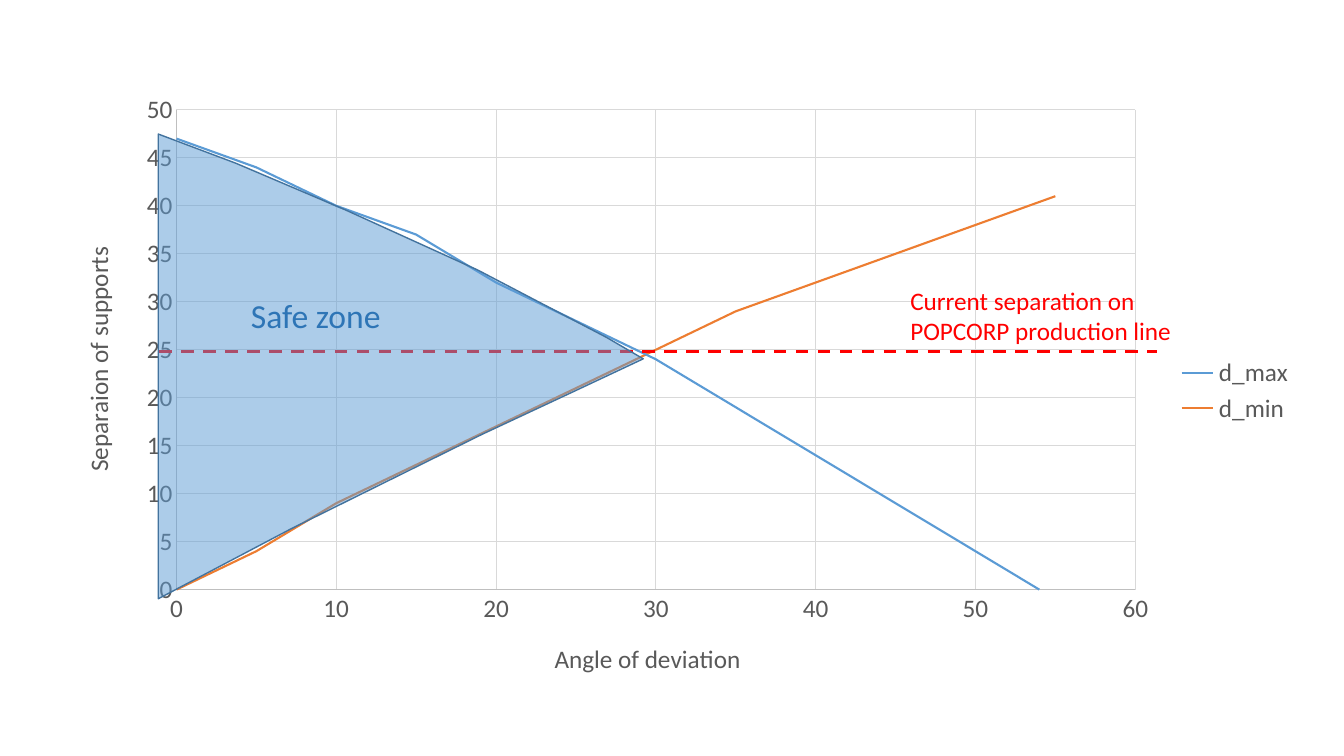
from lxml import etree
from pptx import Presentation
from pptx.chart.data import XyChartData
from pptx.dml.color import RGBColor
from pptx.enum.chart import XL_CHART_TYPE, XL_LEGEND_POSITION, XL_TICK_MARK
from pptx.enum.dml import MSO_LINE
from pptx.enum.shapes import MSO_CONNECTOR
from pptx.oxml.ns import qn
from pptx.util import Inches, Pt

SCATTER = XL_CHART_TYPE.XY_SCATTER_SMOOTH_NO_MARKERS
LEGEND_RIGHT = XL_LEGEND_POSITION.RIGHT
NO_TICK = XL_TICK_MARK.NONE
DASH = MSO_LINE.DASH
STRAIGHT = MSO_CONNECTOR.STRAIGHT

# Content
FONT = "Calibri"
COLORS = {"max": "5B9BD5", "min": "ED7D31", "text": "595959", "axis": "BFBFBF",
          "grid": "D9D9D9", "alert": "FF0000", "zone": "5B9BD5",
          "zone_line": "43739E", "zone_text": "2E75B6"}
ANGLES = range(0, 60, 5)
SERIES = [
    ("d_max", "max", [47, 44, 40, 37, 32, 28, 24, 19, 14, 9, 4, -1]),
    ("d_min", "min", [0, 4, 9, 13, 17, 21, 25, 29, 32, 35, 38, 41]),
]
CHART_BOX = (0.58, 0.82, 12.36, 6.11)
PLOT_BOX = (1.75, 1.09, 9.51, 4.76)
AXES = [  # title, maximum, step
    ("Angle of deviation", 60, 10),
    ("Separaion of supports", 50, 5),
]
CURRENT_LINE = (1.58, 3.49, 11.48, 3.49)
ZONE = [(1.57, 1.33), (1.57, 5.94), (2.88, 5.25), (3.89, 4.75), (4.78, 4.31),
        (5.7, 3.88), (6.38, 3.56), (6.02, 3.35), (4.74, 2.68), (3.42, 2.08),
        (2.34, 1.62)]
CURRENT_LABEL = ("Current separation on POPCORP production line",
                 (8.93, 2.78, 2.98, 0.71), 18, "alert")
ZONE_LABEL = ("Safe zone", (2.39, 2.88, 2.07, 0.5), 24, "zone_text")


def rgb(key):
    return RGBColor.from_string(COLORS[key])


def set_font(font, size, color):
    for name, value in {"name": FONT, "size": Pt(size), "bold": False}.items():
        setattr(font, name, value)
    font.color.rgb = rgb(color)


def set_line(line, color, width):
    line.color.rgb = rgb(color)
    line.width = Pt(width)


def add_label(s, text, box, size, color):
    tf = s.shapes.add_textbox(*map(Inches, box)).text_frame
    tf.word_wrap = True
    r = tf.paragraphs[0].add_run()
    r.text = text
    set_font(r.font, size, color)


def place_plot(chart):
    """Fix the inner plot area as fractions of the chart frame."""
    left, top, width, height = CHART_BOX
    x, y, w, h = PLOT_BOX
    values = {"layoutTarget": "inner", "xMode": "edge", "yMode": "edge",
              "x": (x - left) / width, "y": (y - top) / height,
              "w": w / width, "h": h / height}
    area = chart.element.find(".//" + qn("c:plotArea"))
    for old in area.findall(qn("c:layout")):
        area.remove(old)
    layout = etree.Element(qn("c:layout"))
    manual = etree.SubElement(layout, qn("c:manualLayout"))
    for name, value in values.items():
        text = value if isinstance(value, str) else f"{value:.4f}"
        etree.SubElement(manual, qn("c:" + name)).set("val", text)
    area.insert(0, layout)


prs = Presentation()
prs.slide_width, prs.slide_height = Inches(13.33), Inches(7.5)
s = prs.slides.add_slide(prs.slide_layouts[6])

# Chart
data = XyChartData()
for name, _, values in SERIES:
    series = data.add_series(name)
    for angle, value in zip(ANGLES, values):
        series.add_data_point(angle, value)
chart = s.shapes.add_chart(SCATTER, *map(Inches, CHART_BOX), data).chart
set_font(chart.font, 18, "text")
chart.has_title = False
chart.has_legend = True
chart.legend.position = LEGEND_RIGHT
chart.legend.include_in_layout = False
set_font(chart.legend.font, 18, "text")
plot = chart.plots[0]
plot.vary_by_categories = False
for series, (_, color, _) in zip(plot.series, SERIES):
    series.smooth = True
    set_line(series.format.line, color, 1.5)

# Axes
for axis, (title, maximum, step) in zip((chart.category_axis, chart.value_axis), AXES):
    settings = {"minimum_scale": 0, "maximum_scale": maximum, "major_unit": step,
                "major_tick_mark": NO_TICK, "minor_tick_mark": NO_TICK,
                "has_major_gridlines": True}
    for name, value in settings.items():
        setattr(axis, name, value)
    set_line(axis.format.line, "axis", 0.75)
    set_line(axis.major_gridlines.format.line, "grid", 0.75)
    set_font(axis.tick_labels.font, 18, "text")
    p = axis.axis_title.text_frame.paragraphs[0]
    r = p.add_run()
    r.text = title
    set_font(r.font, 18, "text")
place_plot(chart)

# Current separation
current = s.shapes.add_connector(STRAIGHT, *map(Inches, CURRENT_LINE))
set_line(current.line, "alert", 2.25)
current.line.dash_style = DASH
etree.SubElement(current.element.spPr, qn("a:effectLst"))
add_label(s, *CURRENT_LABEL)

# Safe zone
points = [(Inches(x), Inches(y)) for x, y in ZONE]
builder = s.shapes.build_freeform(*points[0])
builder.add_line_segments(points[1:], close=True)
zone = builder.convert_to_shape()
zone.shadow.inherit = False
zone.fill.solid()
zone.fill.fore_color.rgb = rgb("zone")
fill_color = zone.element.spPr.find(qn("a:solidFill"))[0]
etree.SubElement(fill_color, qn("a:alpha")).set("val", "50000")
set_line(zone.line, "zone_line", 1)
add_label(s, *ZONE_LABEL)

prs.save("out.pptx")
